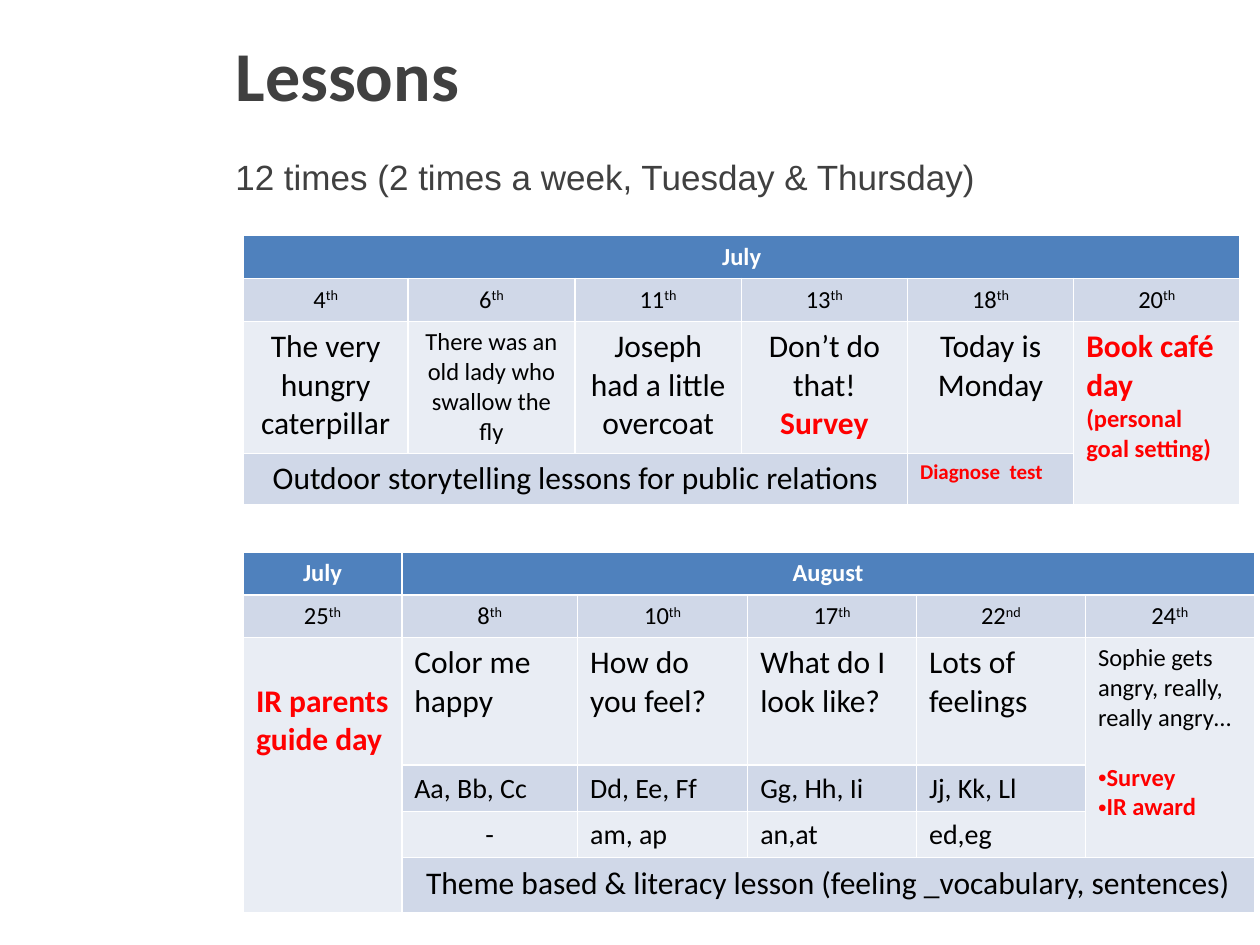
from dataclasses import dataclass

from lxml.etree import SubElement
from pptx import Presentation
from pptx.dml.color import RGBColor
from pptx.enum.text import MSO_ANCHOR, PP_ALIGN
from pptx.oxml.ns import qn
from pptx.util import Pt

RED, BLACK, WHITE, GREY = "FF0000", "000000", "FFFFFF", "404040"
HEADER_FILL, BAND_FILLS = "4F81BD", ("E9EDF4", "D0D8E8")


@dataclass
class Line:
    text: str
    size: float = 18
    color: str = BLACK
    tail: str = ""
    tail_size: float = 0
    raised: bool = False
    bullet: bool = False
    before: float = 0


@dataclass
class Cell:
    lines: list
    centred: bool = True
    span: tuple = (1, 1)
    top: float = 3.6


def heading(text, columns=1):
    return Cell([Line(text, 14, WHITE)], span=(1, columns))


def dates(*days):
    return [Cell([Line(day[:-2], 14, tail=day[-2:], raised=True)]) for day in days]


def plain(text, size=18, centred=True, columns=1):
    return Cell([Line(text, size)], centred, (1, columns))


def left_row(size, *texts):
    return [plain(text, size, False) for text in texts]


TITLE = "Lessons"
SUBTITLE = "12 times (2 times a week, Tuesday & Thursday)"
JULY = [
    [heading("July", 6)],
    dates("4th", "6th", "11th", "13th", "18th", "20th"),
    [
        plain("The very hungry caterpillar"),
        plain("There was an old lady who swallow the fly", 14),
        plain("Joseph had a little overcoat"),
        Cell([Line("Don’t do that!"), Line("Survey", color=RED)]),
        plain("Today is Monday"),
        Cell([Line("Book café day ", color=RED, tail="(personal goal setting)", tail_size=14)],
             False, (2, 1)),
    ],
    [
        plain("Outdoor storytelling lessons for public relations", columns=4),
        Cell([Line("Diagnose  test", 12, RED)], False),
    ],
]
AUGUST = [
    [heading("July"), heading("August", 5)],
    dates("25th", "8th", "10th", "17th", "22nd", "24th"),
    [
        Cell([Line("IR parents guide day", color=RED)], False, (4, 1), top=25.6),
        *left_row(18, "Color me happy", "How do you feel?", "What do I look like?",
                  "Lots of feelings"),
        Cell([
            Line("Sophie gets angry, really, really angry…", 14),
            Line("Survey", 14, RED, bullet=True, before=17),
            Line("IR award", 14, RED, bullet=True),
        ], False, (3, 1)),
    ],
    left_row(16, "Aa, Bb, Cc", "Dd, Ee, Ff", "Gg, Hh, Ii", "Jj, Kk, Ll"),
    [plain("-", 16), *left_row(16, "am, ap", "an,at", "ed,eg")],
    [plain("Theme based & literacy lesson (feeling _vocabulary, sentences)", columns=5)],
]
TABLES = [
    (JULY, 134.6, [94, 95.5, 95, 95, 95, 95], [24.5, 24.5, 75.6, 29.5]),
    (AUGUST, 315.6, [90.5, 100.5, 97.2, 96.5, 96.5, 96.5], [24.3, 24.3, 73, 26.5, 26.5, 31.5]),
]
TABLE_LEFT = 139.1


def style(font, size, color, bold=False, name="Calibri"):
    font.name, font.size, font.bold = name, Pt(size), bold
    font.color.rgb = RGBColor.from_string(color)


def write_line(paragraph, line, centred):
    paragraph.alignment = PP_ALIGN.CENTER if centred else PP_ALIGN.LEFT
    if line.before:
        paragraph.space_before = Pt(line.before)
    if line.bullet:
        properties = paragraph._p.get_or_add_pPr()
        SubElement(properties, qn("a:buFont"), typeface="Arial")
        SubElement(properties, qn("a:buChar"), char="•")
    style(paragraph.font, line.size, line.color, line.color != BLACK)
    for text in filter(None, (line.text, line.tail)):
        run = paragraph.add_run()
        run.text = text
        style(run.font, line.size, line.color, line.color != BLACK)
    if line.tail_size:
        run.font.size = Pt(line.tail_size)
    if line.raised:
        run._r.get_or_add_rPr().set("baseline", "30000")


def fill_cell(target, cell, color):
    target.fill.solid()
    target.fill.fore_color.rgb = RGBColor.from_string(color)
    target.margin_top = Pt(cell.top)
    frame = target.text_frame
    for index, line in enumerate(cell.lines):
        paragraph = frame.add_paragraph() if index else frame.paragraphs[0]
        write_line(paragraph, line, cell.centred)


def add_lesson_table(slide, rows, top, widths, heights):
    table = slide.shapes.add_table(
        len(heights), len(widths), Pt(TABLE_LEFT), Pt(top), Pt(sum(widths)), Pt(sum(heights))
    ).table
    for column, width in zip(table.columns, widths):
        column.width = Pt(width)
    for row, height in zip(table.rows, heights):
        row.height = Pt(height)
    for r, cells in enumerate(rows):
        c = 0
        for cell in cells:
            while table.cell(r, c).is_spanned:
                c += 1
            target = table.cell(r, c)
            height, width = cell.span
            if cell.span != (1, 1):
                target.merge(table.cell(r + height - 1, c + width - 1))
            fill_cell(target, cell, BAND_FILLS[r % 2] if r else HEADER_FILL)
            c += width


def set_text(shape, text, size, bold, name):
    frame = shape.text_frame
    frame.text = text
    frame.word_wrap = True
    frame.vertical_anchor = MSO_ANCHOR.MIDDLE
    paragraph = frame.paragraphs[0]
    paragraph.alignment = PP_ALIGN.LEFT
    style(paragraph.font, size, GREY, bold, name)


def main():
    """Build the lesson schedule slide."""
    presentation = Presentation()
    presentation.slide_width, presentation.slide_height = Pt(720), Pt(540)
    slide = presentation.slides.add_slide(presentation.slide_layouts[5])
    title = slide.shapes.title
    title.left, title.top, title.width, title.height = Pt(127.4), Pt(0), Pt(592.6), Pt(84.2)
    set_text(title, TITLE, 40, True, "Calibri")
    subtitle = slide.shapes.add_textbox(Pt(127.4), Pt(82.8), Pt(517), Pt(36))
    set_text(subtitle, SUBTITLE, 20, False, "Arial")
    for table in TABLES:
        add_lesson_table(slide, *table)
    presentation.save("out.pptx")


if __name__ == "__main__":
    main()
